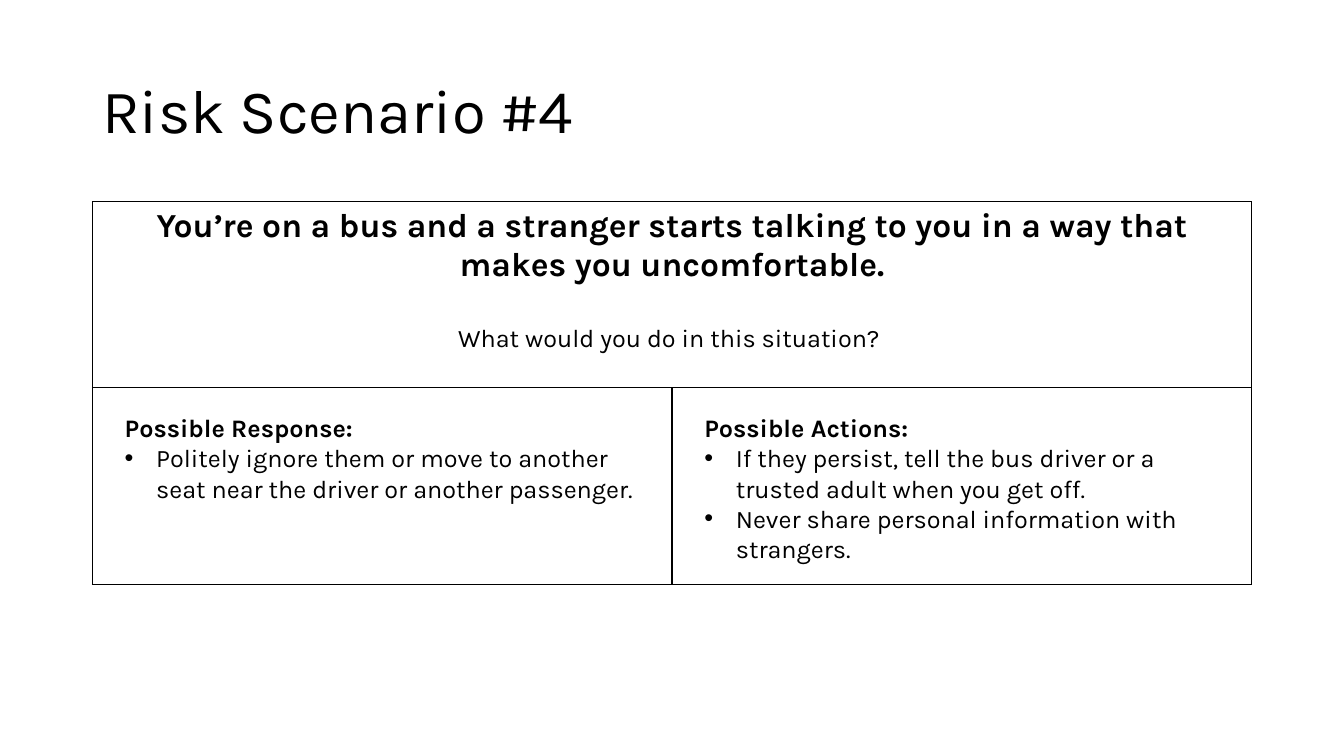
from lxml import etree
from pptx import Presentation
from pptx.dml.color import RGBColor
from pptx.enum.text import MSO_ANCHOR, PP_ALIGN
from pptx.oxml.ns import qn
from pptx.util import Pt

MIDDLE = MSO_ANCHOR.MIDDLE
TOP = MSO_ANCHOR.TOP
CENTER = PP_ALIGN.CENTER
LEFT = PP_ALIGN.LEFT
BLANK_LAYOUT = 6
BULLET_INDENT = 22.5


def color(value):
    return RGBColor.from_string(value)


def write(para, text, size=18, bold=False, align=LEFT, before=0, spacing=1.0,
          bullet=False, font="Karla", ink="000000"):
    if bullet:
        properties = para._p.get_or_add_pPr()
        properties.set("marL", str(Pt(BULLET_INDENT)))
        properties.set("indent", str(-Pt(BULLET_INDENT)))
        etree.SubElement(properties, qn("a:buFont")).set("typeface", "Arial")
        etree.SubElement(properties, qn("a:buChar")).set("char", "•")
    para.alignment = align
    para.line_spacing = spacing
    if before:
        para.space_before = Pt(before)
    span = para.add_run()
    span.text = text
    span.font.name = font
    span.font.size = Pt(size)
    span.font.bold = bold
    span.font.color.rgb = color(ink)


class Page:
    def __init__(self, deck, line="000000", line_width=1):
        self.slide = deck.slides.add_slide(deck.slide_layouts[BLANK_LAYOUT])
        self.line = line
        self.line_width = line_width

    def text(self, left, top, width, height, paragraphs, anchor=TOP):
        box = self.slide.shapes.add_textbox(Pt(left), Pt(top), Pt(width), Pt(height))
        frame = box.text_frame
        frame.word_wrap = True
        frame.vertical_anchor = anchor
        self.fill_frame(frame, paragraphs)

    def fill_frame(self, frame, paragraphs):
        for index, (text, style) in enumerate(paragraphs):
            para = frame.add_paragraph() if index else frame.paragraphs[0]
            write(para, text, **style)

    def answers(self, left, top, width, height, heading, items):
        paragraphs = [(heading, {"bold": True})]
        paragraphs += [(item, {"bullet": True}) for item in items]
        self.text(left, top, width, height, paragraphs)

    def table(self, left, top, columns, rows):
        frame = self.slide.shapes.add_table(
            len(rows), len(columns), Pt(left), Pt(top), Pt(sum(columns)), Pt(sum(rows)))
        table = frame.table
        table.first_row = False
        table.horz_banding = False
        for column, width in zip(table.columns, columns):
            column.width = Pt(width)
        for row, height in zip(table.rows, rows):
            row.height = Pt(height)
        for cell in table.iter_cells():
            self.border(cell)
            cell.fill.background()
        return table

    def border(self, cell):
        properties = cell._tc.get_or_add_tcPr()
        for side in ("a:lnL", "a:lnR", "a:lnT", "a:lnB"):
            edge = etree.SubElement(properties, qn(side))
            edge.set("w", str(Pt(self.line_width)))
            fill = etree.SubElement(edge, qn("a:solidFill"))
            etree.SubElement(fill, qn("a:srgbClr")).set("val", self.line)


def main():
    deck = Presentation()
    deck.slide_width = Pt(960)
    deck.slide_height = Pt(540)
    page = Page(deck)

    left, column_width = 66, 414
    page.text(left, 28.75, 2 * column_width, 104.4,
              [("Risk Scenario #4", {"size": 44, "spacing": 0.9})], anchor=MIDDLE)

    scenario = page.table(left, 144, [column_width] * 2, [133, 140.4])
    question = scenario.cell(0, 0)
    question.merge(scenario.cell(0, 1))
    page.fill_frame(question.text_frame, [
        ("You’re on a bus and a stranger starts talking to you in a way that "
         "makes you uncomfortable.", {"size": 24, "bold": True, "align": CENTER}),
        ("What would you do in this situation? ", {"align": CENTER, "before": 28}),
    ])

    answers = [
        ("Possible Response:", 72.7, [
            "Politely ignore them or move to another seat near the driver or another passenger.",
        ]),
        ("Possible Actions:", 116.6, [
            "If they persist, tell the bus driver or a trusted adult when you get off.",
            "Never share personal information with strangers.",
        ]),
    ]
    for index, (heading, height, items) in enumerate(answers):
        page.answers(left + 16 + index * column_width, 291, 398, height, heading, items)

    deck.save("out.pptx")


if __name__ == "__main__":
    main()
